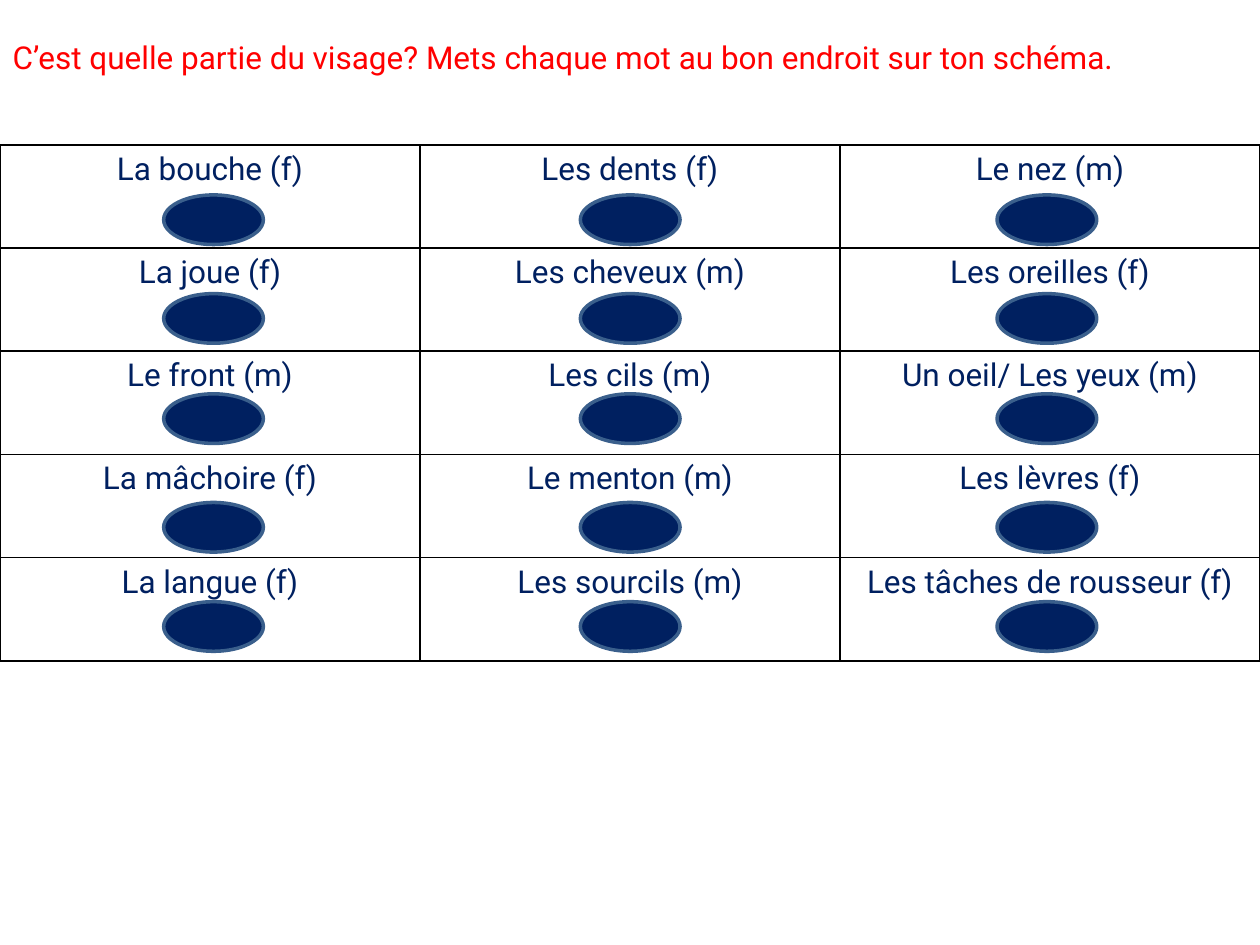
from dataclasses import dataclass

from lxml import etree
from pptx import Presentation
from pptx import util as u
from pptx.dml.color import RGBColor
from pptx.enum import shapes, text
from pptx.oxml.ns import qn
from pptx.slide import Slide
from pptx.table import _Cell
from pptx.text.text import TextFrame


@dataclass(frozen=True)
class Theme:
    font: str = "Roboto"
    size: u.Pt = u.Pt(18)
    title: RGBColor = RGBColor(0xFF, 0x00, 0x00)
    navy: RGBColor = RGBColor(0x00, 0x20, 0x60)
    outline: RGBColor = RGBColor(0x3A, 0x5F, 0x8C)
    border: RGBColor = RGBColor(0x00, 0x00, 0x00)


@dataclass(frozen=True)
class WordRow:
    labels: tuple[str, ...]
    oval_top: u.Cm


THEME = Theme()
WIDTH, HEIGHT = u.Cm(25.4), u.Cm(19.05)
TABLE_TOP, ROW_HEIGHT = u.Cm(2.92), u.Cm(2.08)
OVAL_WIDTH, OVAL_HEIGHT = u.Cm(2.01), u.Cm(1)
OVAL_LEFT, OVAL_STEP = u.Cm(3.3), u.Cm(8.4)

TITLE = "C’est quelle partie du visage? Mets chaque mot au bon endroit sur ton schéma."
ROWS = [
    WordRow(("La bouche (f)", "Les dents (f)", "Le nez (m)"), u.Cm(3.93)),
    WordRow(("La joue (f)", "Les cheveux (m)", "Les oreilles (f)"), u.Cm(5.92)),
    WordRow(("Le front (m)", "Les cils (m)", "Un oeil/ Les yeux (m)"), u.Cm(7.94)),
    WordRow(("La mâchoire (f)", "Le menton (m)", "Les lèvres (f)"), u.Cm(10.13)),
    WordRow(("La langue (f)", "Les sourcils (m)", "Les tâches de rousseur (f)"), u.Cm(12.13)),
]


def set_text(tf: TextFrame, words: str, color: RGBColor, align: text.PP_ALIGN) -> None:
    tf.text = words
    p = tf.paragraphs[0]
    p.alignment = align
    p.font.name, p.font.size = THEME.font, THEME.size
    p.font.color.rgb = color


def add_title(s: Slide) -> None:
    sp = s.shapes.title
    sp.left, sp.top, sp.width, sp.height = 0, u.Cm(0.64), WIDTH, u.Cm(1.03)
    tf = sp.text_frame
    tf.word_wrap = True
    tf.auto_size = text.MSO_AUTO_SIZE.SHAPE_TO_FIT_TEXT
    tf.vertical_anchor = text.MSO_ANCHOR.TOP
    set_text(tf, TITLE, THEME.title, text.PP_ALIGN.LEFT)


def set_borders(cell: _Cell) -> None:
    """Draw a thin line on all four sides; must run before the cell fill is set."""
    tc_pr = cell._tc.get_or_add_tcPr()
    for side in ("a:lnL", "a:lnR", "a:lnT", "a:lnB"):
        ln = etree.SubElement(tc_pr, qn(side), w=str(u.Pt(1)))
        fill = etree.SubElement(ln, qn("a:solidFill"))
        etree.SubElement(fill, qn("a:srgbClr"), val=str(THEME.border))


def add_word_table(s: Slide) -> None:
    rows, cols = len(ROWS), len(ROWS[0].labels)
    table = s.shapes.add_table(rows, cols, 0, TABLE_TOP, WIDTH, ROW_HEIGHT * rows).table
    table.first_row = table.horz_banding = False
    for r, row in enumerate(ROWS):
        for c, label in enumerate(row.labels):
            cell = table.cell(r, c)
            set_text(cell.text_frame, label, THEME.navy, text.PP_ALIGN.CENTER)
            set_borders(cell)
            cell.fill.background()


def add_oval(s: Slide, left: int, top: int) -> None:
    sp = s.shapes.add_shape(shapes.MSO_SHAPE.OVAL, left, top, OVAL_WIDTH, OVAL_HEIGHT)
    sp.shadow.inherit = False
    sp.fill.solid()
    sp.fill.fore_color.rgb = THEME.navy
    sp.line.color.rgb = THEME.outline
    sp.line.width = u.Pt(2)


def main() -> None:
    prs = Presentation()
    prs.slide_width, prs.slide_height = WIDTH, HEIGHT
    s = prs.slides.add_slide(prs.slide_layouts[5])
    add_title(s)
    add_word_table(s)
    for row in ROWS:
        for c in range(len(row.labels)):
            add_oval(s, OVAL_LEFT + c * OVAL_STEP, row.oval_top)
    prs.save("out.pptx")


if __name__ == "__main__":
    main()
